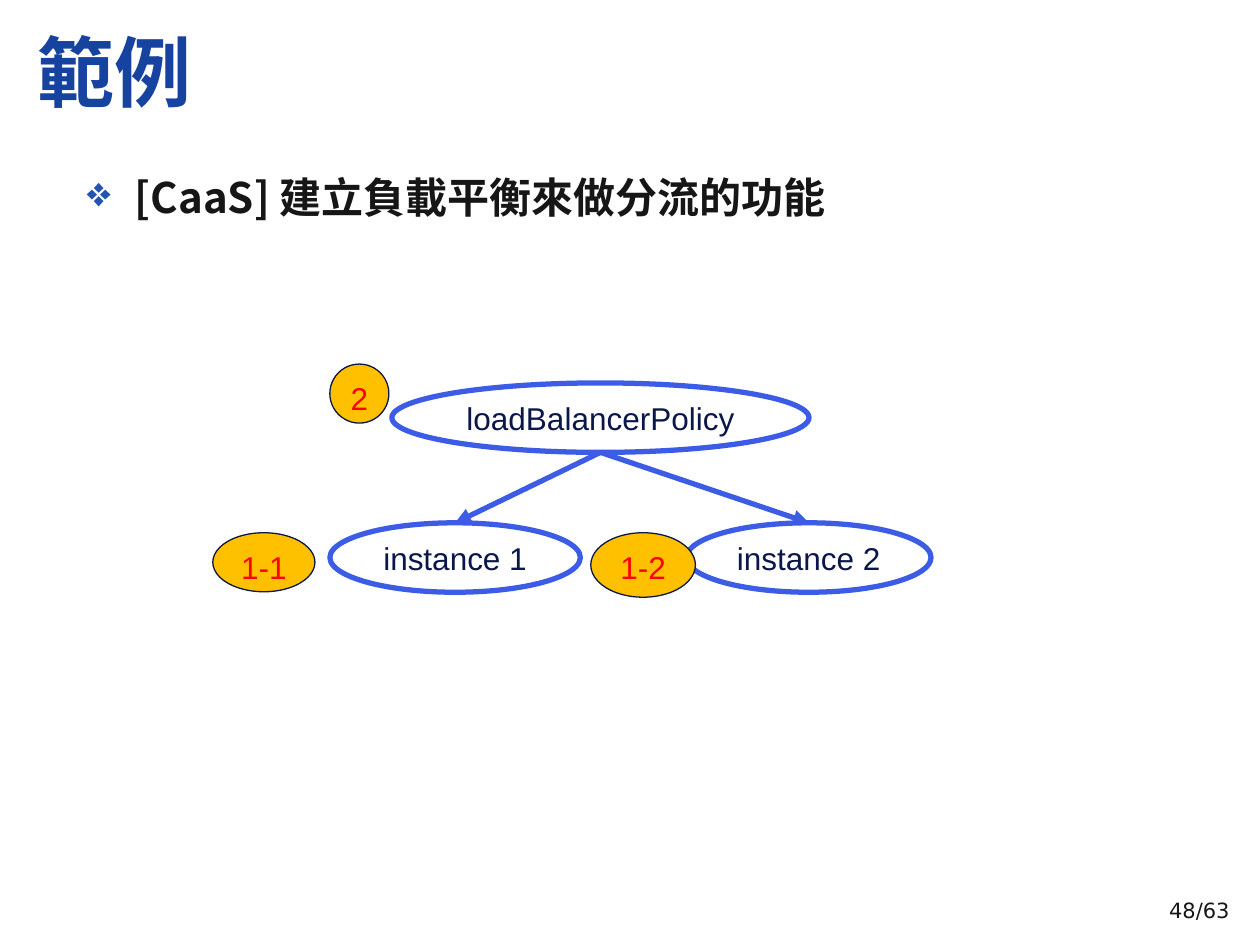
from lxml import etree
from pptx import Presentation
from pptx.dml.color import RGBColor
from pptx.enum.shapes import MSO_CONNECTOR, MSO_SHAPE
from pptx.enum.text import MSO_ANCHOR, PP_ALIGN
from pptx.oxml.ns import qn
from pptx.util import Cm, Pt

OVAL = MSO_SHAPE.OVAL
STRAIGHT = MSO_CONNECTOR.STRAIGHT
TOP, MIDDLE = MSO_ANCHOR.TOP, MSO_ANCHOR.MIDDLE
CENTER = PP_ALIGN.CENTER

CJK, LATIN, NUMBER = "Noto Sans CJK SC", "Arial", "DejaVu Sans"
BLUE, NAVY, BLACK = "3C5CE5", "0B1749", "161616"
TITLE_BLUE, BULLET_BLUE = "15439F", "2453B2"
AMBER, RED = "FFC000", "FF0000"

# Places are left, top, width, height in centimetres
TITLE = ("範例", (0.51, 0.33, 19, 2.21))
TOPIC = ("[CaaS] 建立負載平衡來做分流的功能", (1.5, 3.33, 21.21, 1.19))
PAGE_NUMBER = ("48/63", (23.32, 17.96, 2.18, 0.76))
POLICY = ("loadBalancerPolicy", (7.9, 7.72, 8.41, 1.4))
INSTANCES = [
    ("instance 2", (13.84, 10.54, 4.93, 1.4)),
    ("instance 1", (6.65, 10.54, 5.05, 1.4)),
]
STEPS = [
    ("1-1", (4.29, 10.74, 2.06, 1.19)),
    ("1-2", (11.91, 10.74, 2.11, 1.3)),
    ("2", (6.65, 7.34, 1.19, 1.19)),
]


def color(hex_code):
    return RGBColor.from_string(hex_code)


def write(shape, text, font, size, text_color, bold=False, anchor=TOP, wrap=True):
    frame = shape.text_frame
    frame.text = text
    frame.word_wrap = wrap
    frame.vertical_anchor = anchor
    para = frame.paragraphs[0]
    for span in para.runs:
        span.font.name = font
        span.font.size = Pt(size)
        span.font.bold = bold
        span.font.color.rgb = color(text_color)
        east_asian = etree.SubElement(span.font._element, qn("a:ea"))
        east_asian.set("typeface", font)
    return para


def add_text(page, content, *style, **options):
    text, place = content
    box = page.shapes.add_textbox(*map(Cm, place))
    return write(box, text, *style, **options)


def add_oval(page, content, fill, line, line_width, text_color, anchor):
    text, place = content
    oval = page.shapes.add_shape(OVAL, *map(Cm, place))
    oval.shadow.inherit = False
    if fill:
        oval.fill.solid()
        oval.fill.fore_color.rgb = color(fill)
    else:
        oval.fill.background()
    oval.line.color.rgb = color(line)
    oval.line.width = Pt(line_width)
    para = write(oval, text, LATIN, 18, text_color, anchor=anchor, wrap=False)
    para.alignment = CENTER
    return oval


def add_arrow(page, source, target):
    """Draw an arrow from the bottom of source to the top of target."""
    start = (source.left + source.width // 2, source.top + source.height)
    arrow = page.shapes.add_connector(STRAIGHT, *start, *start)
    arrow.end_connect(target, 0)
    arrow.line.color.rgb = color(BLUE)
    arrow.line.width = Pt(3)
    etree.SubElement(arrow.line._get_or_add_ln(), qn("a:tailEnd"), type="triangle")
    etree.SubElement(arrow._element.spPr, qn("a:effectLst"))


def add_bullet(para, symbol, bullet_color, indent):
    properties = para._p.get_or_add_pPr()
    properties.set("marL", str(indent))
    properties.set("indent", str(-indent))
    shade = etree.SubElement(properties, qn("a:buClr"))
    etree.SubElement(shade, qn("a:srgbClr"), val=bullet_color)
    etree.SubElement(properties, qn("a:buChar"), char=symbol)


def main():
    deck = Presentation()
    deck.slide_width, deck.slide_height = Cm(25.4), Cm(19.05)
    page = deck.slides.add_slide(deck.slide_layouts[6])

    add_text(page, PAGE_NUMBER, NUMBER, 12, BLACK, wrap=False)
    add_text(page, TITLE, CJK, 44, TITLE_BLUE, bold=True, anchor=MIDDLE)
    topic = add_text(page, TOPIC, CJK, 24, BLACK, bold=True)
    add_bullet(topic, "❖", BULLET_BLUE, Cm(0.97))

    node_style = (None, BLUE, 3, NAVY, MIDDLE)
    policy = add_oval(page, POLICY, *node_style)
    instances = [add_oval(page, content, *node_style) for content in INSTANCES]
    for instance in instances:
        add_arrow(page, policy, instance)
    for content in STEPS:
        add_oval(page, content, AMBER, NAVY, 0.75, RED, TOP)

    deck.save("out.pptx")


if __name__ == "__main__":
    main()
